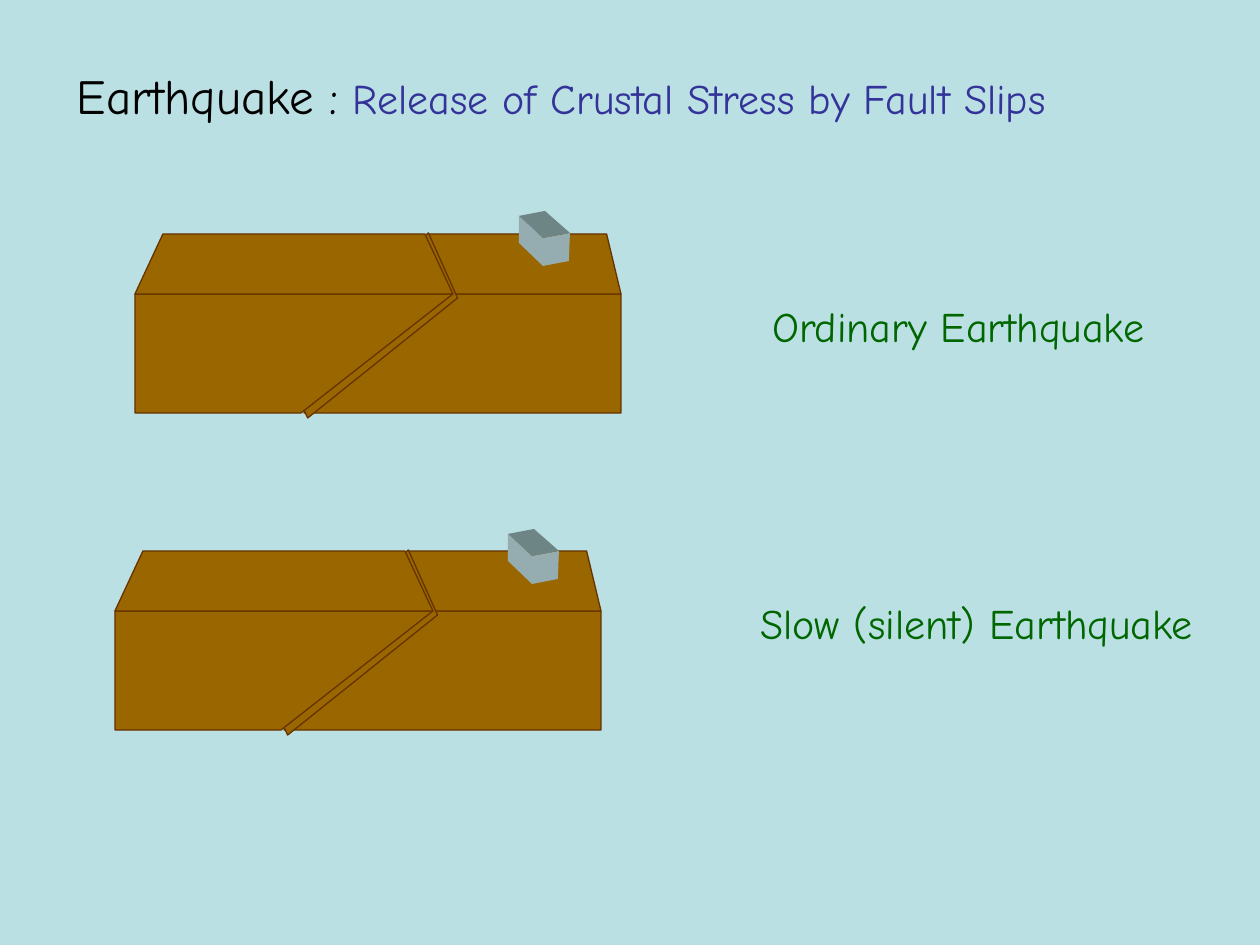
import pptx
import pptx.dml.color
import pptx.enum.shapes
import pptx.enum.text
import pptx.util

EMU_PER_PX = 914400 / 126
FONT = "Comic Neue"
BACKGROUND, SOIL, SOIL_EDGE = "BBE0E3", "996600", "663300"
CUBE_TOP, CUBE_SIDE = "6E8586", "95ADB0"
PARALLELOGRAM = pptx.enum.shapes.MSO_SHAPE.PARALLELOGRAM


def px(length):
    return pptx.util.Emu(round(length * EMU_PER_PX))


def paint(color_format, color):
    color_format.rgb = pptx.dml.color.RGBColor.from_string(color)


def style(shape, fill, edge=None):
    shape.shadow.inherit = False
    shape.fill.solid()
    paint(shape.fill.fore_color, fill)
    if edge:
        paint(shape.line.color, edge)
        shape.line.width = pptx.util.Pt(0.75)
    else:
        shape.line.fill.background()


def add_run(paragraph, text, size=24, color="000000"):
    run = paragraph.add_run()
    run.text = text
    run.font.name = FONT
    run.font.size = pptx.util.Pt(size)
    paint(run.font.color, color)


def fit_frame(frame):
    """Let the text run on one line from the top left of its box."""
    frame.word_wrap = False
    frame.auto_size = pptx.enum.text.MSO_AUTO_SIZE.SHAPE_TO_FIT_TEXT
    frame.vertical_anchor = pptx.enum.text.MSO_ANCHOR.TOP
    frame.paragraphs[0].alignment = pptx.enum.text.PP_ALIGN.LEFT
    return frame.paragraphs[0]


def add_title(slide):
    title = slide.shapes.title
    title.left, title.top, title.width, title.height = map(px, (64, 59, 1123, 72))
    paragraph = fit_frame(title.text_frame)
    add_run(paragraph, "Earthquake :", size=28)
    add_run(paragraph, " ")
    add_run(paragraph, "Release of Crustal Stress by Fault Slips", color="333399")


def add_label(slide, text, left, top, width):
    box = slide.shapes.add_textbox(px(left), px(top), px(width), px(63))
    add_run(fit_frame(box.text_frame), text, color="006600")


def add_polygon(slide, origin, points, fill, edge=None):
    """Draw a closed outline whose points are relative to origin."""
    corners = [(origin[0] + x, origin[1] + y) for x, y in points]
    builder = slide.shapes.build_freeform(*corners[0], scale=EMU_PER_PX)
    builder.add_line_segments(corners[1:], close=True)
    style(builder.convert_to_shape(), fill, edge)


def add_parallelogram(slide, origin, left, top, width, height, slant):
    shape = slide.shapes.add_shape(
        PARALLELOGRAM, px(origin[0] + left), px(origin[1] + top), px(width), px(height))
    shape.adjustments[0] = slant
    style(shape, SOIL, SOIL_EDGE)
    return shape


def add_crust(slide, origin):
    """Draw two blocks and their fault; origin is the left block's front top corner."""
    right_front = [(486, 119), (169, 119), (321, 0), (486, 0)]
    left_front = [(0, 0), (318, 0), (166, 119), (0, 119)]
    left_top = [(0, 0), (28, -60), (290, -60), (318, 0)]

    add_polygon(slide, origin, right_front, SOIL, SOIL_EDGE)
    right_top = add_parallelogram(slide, origin, 293, -60, 193, 60, slant=0.24)
    right_top.element.spPr.xfrm.set("flipH", "1")
    fault = add_parallelogram(slide, origin, 128, -3, 210, 69, slant=0.26)
    fault.rotation = 321.3
    for face in (left_front, left_top):
        add_polygon(slide, origin, face, SOIL, SOIL_EDGE)


def add_cube(slide, origin):
    """Draw a cube; origin is the corner where its three faces meet."""
    add_polygon(slide, origin, [(0, 0), (-24, -22), (-24, 5), (0, 28)], CUBE_SIDE)
    add_polygon(slide, origin, [(0, 0), (27, -5), (26, 23), (0, 28)], CUBE_SIDE)
    add_polygon(slide, origin, [(0, 0), (-24, -22), (2, -27), (27, -5)], CUBE_TOP)


def main():
    deck = pptx.Presentation()
    deck.slide_width, deck.slide_height = px(1260), px(945)
    slide = deck.slides.add_slide(deck.slide_layouts[5])
    slide.background.fill.solid()
    paint(slide.background.fill.fore_color, BACKGROUND)

    add_title(slide)
    for crust, cube in (((135, 294), (543, 238)), ((115, 611), (532, 556))):
        add_crust(slide, crust)
        add_cube(slide, cube)
    add_label(slide, "Ordinary Earthquake", 760, 294, 436)
    add_label(slide, "Slow (silent) Earthquake", 748, 591, 504)
    deck.save("out.pptx")


if __name__ == "__main__":
    main()
